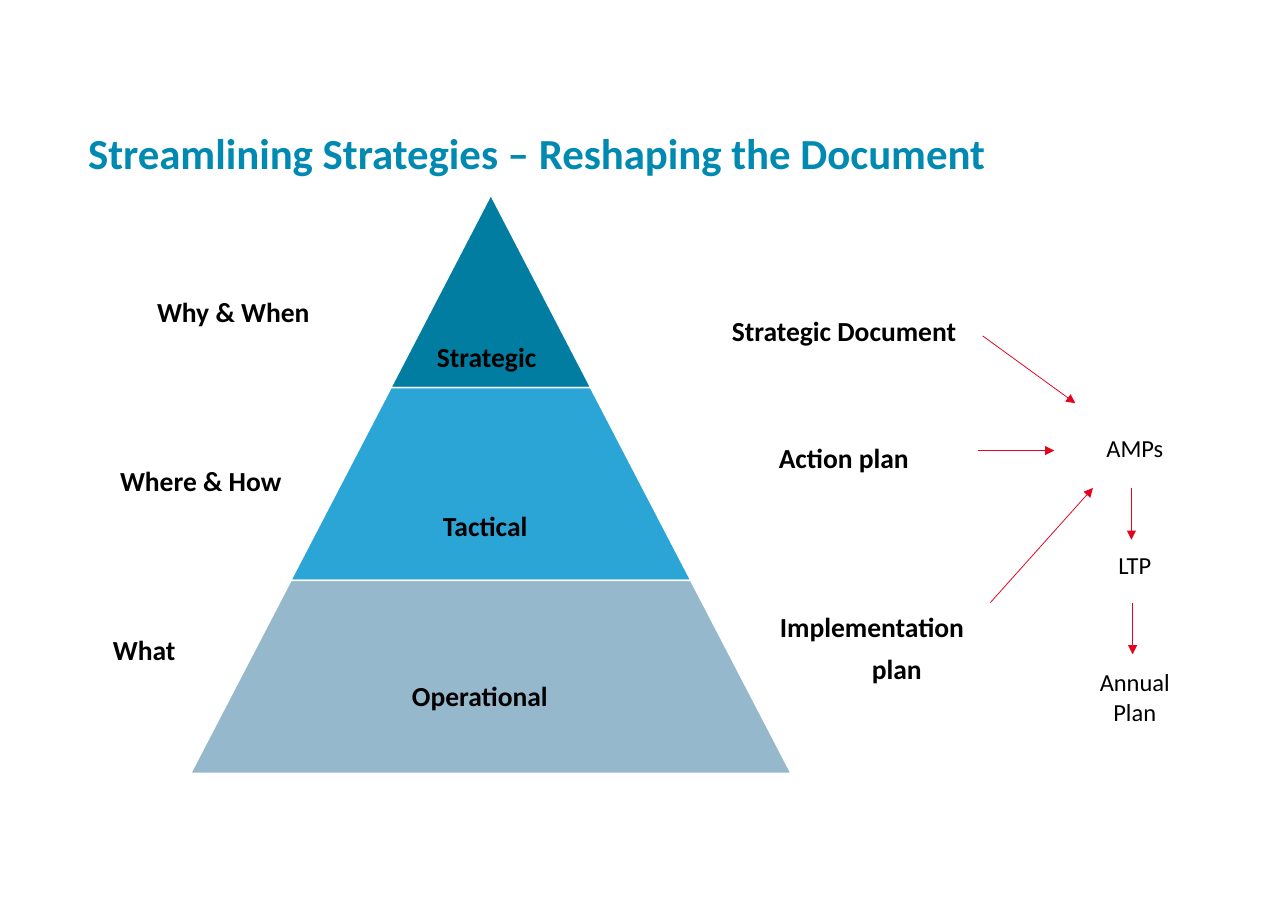
from pptx import Presentation
from pptx.dml.color import RGBColor as Color
from pptx.enum.shapes import MSO_CONNECTOR as Link, MSO_SHAPE as Form
from pptx.enum.text import MSO_ANCHOR as Anchor, PP_ALIGN as Align
from pptx.oxml.ns import qn
from pptx.util import Inches, Pt
from lxml.etree import SubElement as Sub

HUES = {"title": "008AB1", "text": "000000", "edge": "FFFFFF", "arrow": "E30520"}

deck = Presentation()
deck.slide_width, deck.slide_height = Inches(11.69), Inches(8.27)
slide = deck.slides.add_slide(deck.slide_layouts[6])
shapes = slide.shapes

# The slide is a grid of 100 columns by 100 rows
COL, ROW = deck.slide_width / 100, deck.slide_height / 100


def place(*cells):
    """Turn column, row pairs into whole slide lengths."""
    return [round(n * (ROW if i % 2 else COL)) for i, n in enumerate(cells)]


def write(cells, lines, size=18, bold=True, hue="text", align=Align.LEFT,
          anchor=Anchor.TOP):
    frame = shapes.add_textbox(*place(*cells)).text_frame
    look = {"word_wrap": True, "vertical_anchor": anchor, "margin_left": 0,
            "margin_top": 0, "margin_right": 0, "margin_bottom": 0}
    for key, val in look.items():
        setattr(frame, key, val)
    frame.text = lines
    for para in frame.paragraphs:
        para.alignment = align
        for key, val in {"name": "Calibri", "size": Pt(size), "bold": bold}.items():
            setattr(para.font, key, val)
        para.font.color.rgb = Color.from_string(HUES[hue])
    return frame


# Title
head = write((6.84, 9.55, 86.23, 15.11),
             "Streamlining Strategies – Reshaping the Document",
             size=28, hue="title", anchor=Anchor.MIDDLE)
head.paragraphs[0].line_spacing = 0.9

# Pyramid: each tier is one step wider than the tier above
MID, TOP, WIDE, TALL = 38.11, 21.4, 15.54, 21.16
for i, hue in enumerate(("007DA1", "2BA4D6", "95B8CD")):
    span = WIDE * (i + 1)
    tier = shapes.add_shape(
        Form.TRAPEZOID, *place(MID - span / 2, TOP + i * TALL, span, TALL))
    tier.adjustments[0] = 0.52
    tier.shadow.inherit = False
    tier.fill.solid()
    tier.fill.fore_color.rgb = Color.from_string(hue)
    tier.line.color.rgb = Color.from_string(HUES["edge"])
    tier.line.width = Pt(1)

# Bold labels: top row and width of a column, then left, line and words
STEP = 4.64
columns = [
    (37.36, 14, [(33.92, 0, "Strategic"), (34.39, 4, "Tactical"),
                 (31.98, 8, "Operational")]),
    (32.41, 14, [(12.19, 0, "Why & When"), (9.32, 4, "Where & How"),
                 (8.77, 8, "What")]),
    (34.46, 19, [(56.82, 0, "Strategic Document"), (60.47, 3, "Action plan"),
                 (60.55, 7, "Implementation\nplan")]),
]
for top, wide, labels in columns:
    for left, line, words in labels:
        frame = write((left, top + line * STEP, wide, 3.7), words)
first, last = frame.paragraphs
first.space_after = Pt(6)
last._p.get_or_add_pPr().set("marL", str(place(7.14)[0]))

# Planning chain
for i, words in enumerate(("AMPs", "LTP", "Annual Plan")):
    write((83.92, 47.52 + i * 12.88, 8.38, 3.3 * len(words.split())), words,
          size=16, bold=False, align=Align.CENTER)

# Arrows
for ends in [
    (75.96, 49.46, 81.86, 49.46),
    (87.85, 53.57, 87.85, 59.25),
    (87.94, 66.14, 87.94, 71.83),
    (76.3, 36.88, 83.49, 44.26),
    (76.9, 66.14, 84.86, 53.57),
]:
    arrow = shapes.add_connector(Link.STRAIGHT, *place(*ends))
    arrow.line.color.rgb = Color.from_string(HUES["arrow"])
    arrow.line.width = Pt(0.5)
    Sub(arrow.line._get_or_add_ln(), qn("a:tailEnd"), type="triangle")
    Sub(arrow._element.spPr, qn("a:effectLst"))

deck.save("out.pptx")
